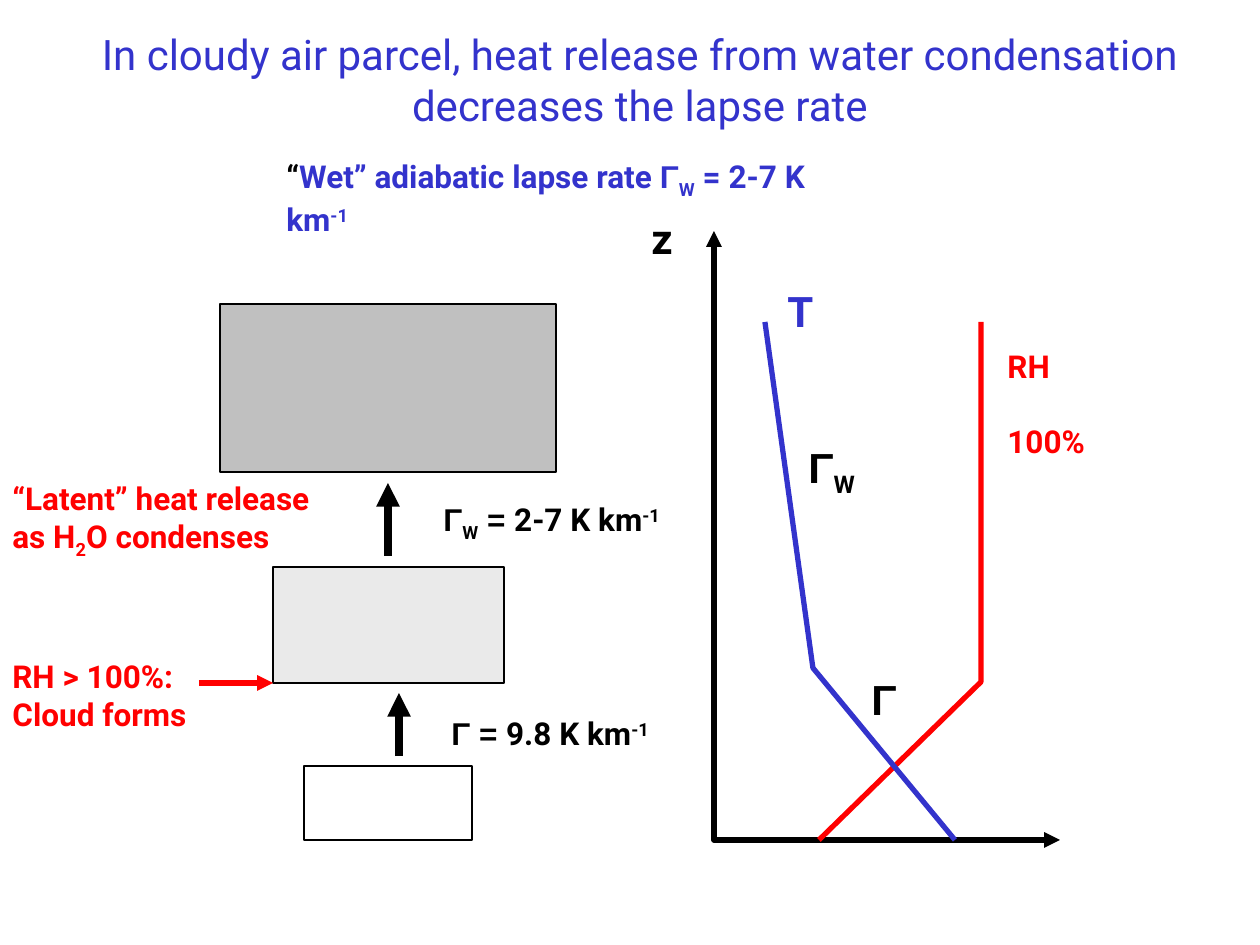
from lxml import etree
from pptx import Presentation
from pptx.dml.color import RGBColor
from pptx.enum.shapes import MSO_CONNECTOR, MSO_SHAPE
from pptx.enum.text import MSO_ANCHOR, PP_ALIGN
from pptx.oxml.ns import qn
from pptx.util import Emu, Pt

RECT = MSO_SHAPE.RECTANGLE
STRAIGHT = MSO_CONNECTOR.STRAIGHT
TOP, MIDDLE = MSO_ANCHOR.TOP, MSO_ANCHOR.MIDDLE
LEFT, CENTER = PP_ALIGN.LEFT, PP_ALIGN.CENTER

PX_PER_INCH = 126
COLORS = {"black": "000000", "blue": "3333CC", "red": "FF0000",
          "light": "EAEAEA", "gray": "C0C0C0"}
SUB, SUPER = {"baseline": -25}, {"baseline": 30}
GREEK = {"font": "Arial"}


def px(length):
    return Emu(round(length * 914400 / PX_PER_INCH))


def rgb(name):
    return RGBColor.from_string(COLORS[name])


def add_span(para, text, font="Roboto", size=18, color="black", bold=True, baseline=0):
    span = para.add_run()
    span.text = text
    span.font.name = font
    span.font.size = Pt(size)
    span.font.bold = bold
    span.font.color.rgb = rgb(color)
    if baseline:
        span.font._element.set("baseline", str(baseline * 1000))


class Slide:
    """Draws the elements of one slide, measured in px."""

    def __init__(self, page):
        self.shapes = page.shapes

    def text(self, left, top, width, height, paras, wrap=False, anchor=TOP,
             align=LEFT, gap=0, **style):
        """Each paragraph is a list of (text, format changes) pairs."""
        box = self.shapes.add_textbox(px(left), px(top), px(width), px(height))
        frame = box.text_frame
        frame.word_wrap = wrap
        frame.vertical_anchor = anchor
        for index, spans in enumerate(paras):
            para = frame.add_paragraph() if index else frame.paragraphs[0]
            para.alignment = align
            if index:
                para.space_before = Pt(gap)
            for words, changes in spans:
                add_span(para, words, **{**style, **changes})

    def outline(self, shape, color, width, head=False, tail=False):
        shape.line.color.rgb = rgb(color)
        shape.line.width = Pt(width)
        line = shape.line._get_or_add_ln()
        for tag, wanted in (("a:headEnd", head), ("a:tailEnd", tail)):
            if wanted:
                etree.SubElement(line, qn(tag), type="triangle")

    def rect(self, left, top, width, height, fill=None):
        shape = self.shapes.add_shape(RECT, px(left), px(top), px(width), px(height))
        shape.shadow.inherit = False
        if fill:
            shape.fill.solid()
            shape.fill.fore_color.rgb = rgb(fill)
        else:
            shape.fill.background()
        self.outline(shape, "black", 0.75)

    def arrow(self, start, end, color="black", width=4.5):
        line = self.shapes.add_connector(STRAIGHT, *map(px, start + end))
        self.outline(line, color, width, tail=True)
        etree.SubElement(line._element.spPr, qn("a:effectLst"))

    def polyline(self, points, color, arrows=False):
        start, *rest = [(px(x), px(y)) for x, y in points]
        builder = self.shapes.build_freeform(*start, scale=1.0)
        builder.add_line_segments(rest, close=False)
        shape = builder.convert_to_shape()
        shape.shadow.inherit = False
        shape.fill.background()
        self.outline(shape, color, 3, head=arrows, tail=arrows)


def main():
    deck = Presentation()
    deck.slide_width, deck.slide_height = px(1260), px(945)
    slide = Slide(deck.slides.add_slide(deck.slide_layouts[6]))

    # Title and subtitle
    title = "In cloudy air parcel, heat release from water condensation decreases the lapse rate"
    slide.text(73, 0, 1134, 158, [[(title, {})]], wrap=True, anchor=MIDDLE,
               align=CENTER, size=24, color="blue", bold=False)
    slide.text(274, 151, 612, 50, [[
        ("“", {"color": "black"}), ("Wet” adiabatic lapse rate ", {}),
        ("Γ", GREEK), ("W", SUB), (" = 2-7 K km", {}), ("-1", SUPER)]], color="blue")

    # Rising and expanding air parcel
    slide.rect(304, 766, 168, 74)
    slide.rect(273, 567, 231, 116, "light")
    slide.rect(220, 304, 336, 168, "gray")
    slide.arrow((399, 756), (399, 693))
    slide.arrow((388, 556), (388, 483))

    # Cloud notes
    slide.arrow((199, 683), (273, 683), "red", 3)
    slide.text(0, 651, 210, 88, [[("RH > 100%:", {})], [("Cloud forms", {})]], color="red")
    slide.text(0, 473, 343, 88, [
        [("“Latent” heat release", {})],
        [("as H", {}), ("2", SUB), ("O condenses", {})]], color="red")

    # Lapse rates beside the arrows
    slide.text(439, 708, 226, 50, [[
        ("Γ = ", GREEK), ("9.8 K km", {}), ("-1", SUPER)]])
    slide.text(431, 494, 247, 50, [[
        ("Γ", GREEK), ("W", SUB), (" = ", GREEK), ("2-7 K km", {}), ("-1", SUPER)]])

    # Height profiles of humidity and temperature
    slide.polyline([(714, 231), (714, 840), (1060, 840)], "black", arrows=True)
    slide.polyline([(819, 840), (981, 682), (981, 322)], "red")
    slide.polyline([(955, 840), (813, 668), (765, 322)], "blue")

    # Profile labels
    slide.text(995, 341, 106, 126, [[("RH", {})], [("100%", {})]], gap=21, color="red")
    for left, top, width, spans, color in (
            (775, 279, 50, [("T", {})], "blue"),
            (639, 206, 47, [("z", {})], "black"),
            (859, 667, 50, [("Γ", GREEK)], "black"),
            (796, 435, 77, [("Γ", GREEK), ("W", SUB)], "black")):
        slide.text(left, top, width, 63, [spans], size=24, color=color)

    deck.save("out.pptx")


if __name__ == "__main__":
    main()
